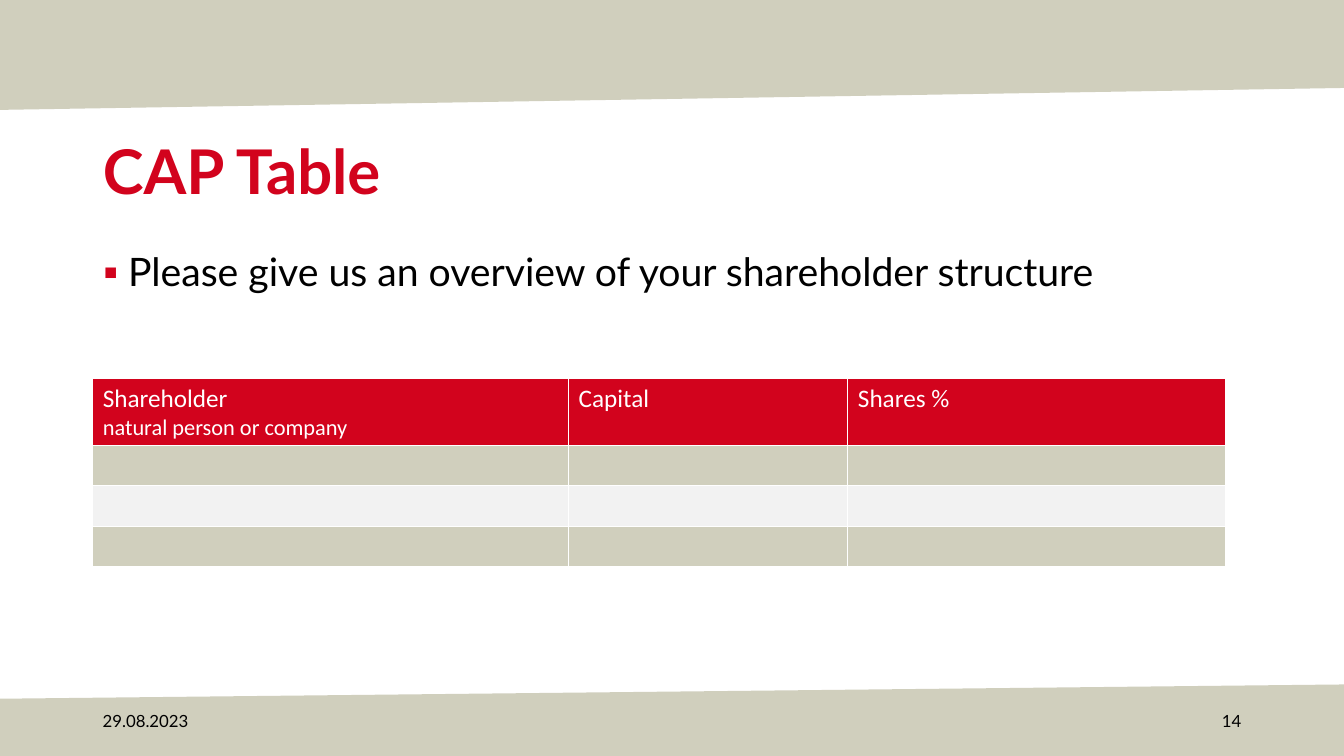
from lxml.etree import SubElement
from pptx import Presentation
from pptx.dml.color import RGBColor
from pptx.enum.shapes import MSO_SHAPE
from pptx.enum.text import MSO_ANCHOR, MSO_AUTO_SIZE, PP_ALIGN
from pptx.oxml.ns import qn
from pptx.util import Inches, Pt

RED, SAND, PALE, WHITE, BLACK = "D2031D", "D0CFBD", "F2F2F2", "FFFFFF", "000000"
WIDTH, HEIGHT, MARGIN = 13.33, 7.5, 0.92


def paint(color_format, color):
    color_format.rgb = RGBColor.from_string(color)


def style(para, size, color, name="Lato", bold=False):
    for span in para.runs:
        span.font.size = Pt(size)
        span.font.name = name
        span.font.bold = bold
        paint(span.font.color, color)


deck = Presentation()
deck.slide_width, deck.slide_height = Inches(WIDTH), Inches(HEIGHT)
page = deck.slides.add_slide(deck.slide_layouts[1])

for top, height, rotation in [(0, 1.09, 180), (HEIGHT - 0.71, 0.71, 0)]:
    band = page.shapes.add_shape(
        MSO_SHAPE.FLOWCHART_MANUAL_INPUT, 0, Inches(top), Inches(WIDTH), Inches(height))
    band.rotation = rotation
    band.shadow.inherit = False
    band.fill.solid()
    paint(band.fill.fore_color, SAND)
    band.line.fill.background()

title, body = page.placeholders
for box, text, top, height, size, color, anchor in [
    (title, "CAP Table", 1.13, 1.2, 44, RED, MSO_ANCHOR.MIDDLE),
    (body, "Please give us an overview of your shareholder structure",
     2.46, 0.96, 28, BLACK, MSO_ANCHOR.TOP),
]:
    box.left, box.top = Inches(MARGIN), Inches(top)
    box.width, box.height = Inches(11.5), Inches(height)
    frame = box.text_frame
    frame.text = text
    frame.auto_size = MSO_AUTO_SIZE.NONE
    frame.vertical_anchor = anchor
    para = frame.paragraphs[0]
    para.alignment = PP_ALIGN.LEFT
    para.line_spacing = 0.9
    para.space_before = Pt(0)
    style(para, size, color, bold=box is title)

properties = body.text_frame.paragraphs[0]._p.get_or_add_pPr()
properties.set("marL", str(Inches(0.25)))
properties.set("indent", str(-Inches(0.25)))
SubElement(SubElement(properties, qn("a:buClr")), qn("a:srgbClr"), val=RED)
SubElement(properties, qn("a:buFont"), typeface="Lato")
SubElement(properties, qn("a:buChar"), char="▪")

for text, left, width, alignment in [
    ("29.08.2023", MARGIN, 3, PP_ALIGN.LEFT),
    ("14", 11.82, 0.59, PP_ALIGN.RIGHT),
]:
    box = page.shapes.add_textbox(Inches(left), Inches(6.95), Inches(width), Inches(0.4))
    frame = box.text_frame
    frame.word_wrap = True
    frame.vertical_anchor = MSO_ANCHOR.MIDDLE
    frame.text = text
    frame.paragraphs[0].alignment = alignment
    style(frame.paragraphs[0], 12, BLACK)

headings = ["Shareholder\vnatural person or company", "Capital", "Shares %"]
column_widths = [4.72, 2.77, 3.75]
row_heights = [0.67] + [0.4] * 3
row_fills = [RED, SAND, PALE, SAND]
table = page.shapes.add_table(
    len(row_heights), len(column_widths), Inches(MARGIN), Inches(3.75),
    Inches(sum(column_widths)), Inches(sum(row_heights))).table
for column, width in zip(table.columns, column_widths):
    column.width = Inches(width)
for row, height, fill in zip(table.rows, row_heights, row_fills):
    row.height = Inches(height)
    for cell in row.cells:
        cell_properties = cell._tc.get_or_add_tcPr()
        for side in ["a:lnL", "a:lnR", "a:lnT", "a:lnB"]:
            line = SubElement(cell_properties, qn(side), w=str(Pt(1)))
            SubElement(SubElement(line, qn("a:solidFill")), qn("a:srgbClr"), val=WHITE)
        cell.fill.solid()
        paint(cell.fill.fore_color, fill)

for cell, heading in zip(table.rows[0].cells, headings):
    cell.text_frame.text = heading
    para = cell.text_frame.paragraphs[0]
    style(para, 18, WHITE, "Calibri")
    for span in para.runs[1:]:
        span.font.size = Pt(16)

deck.save("out.pptx")
